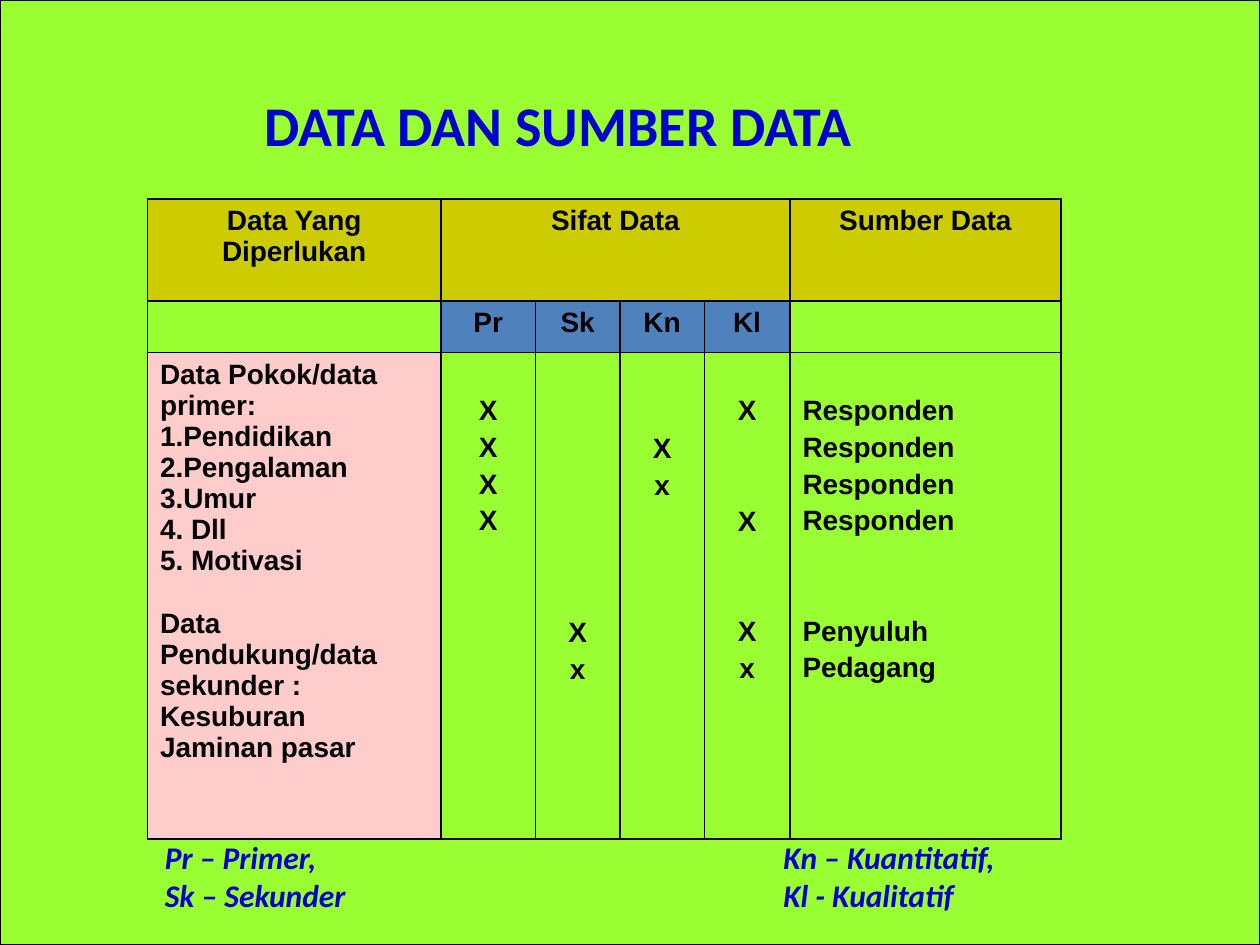
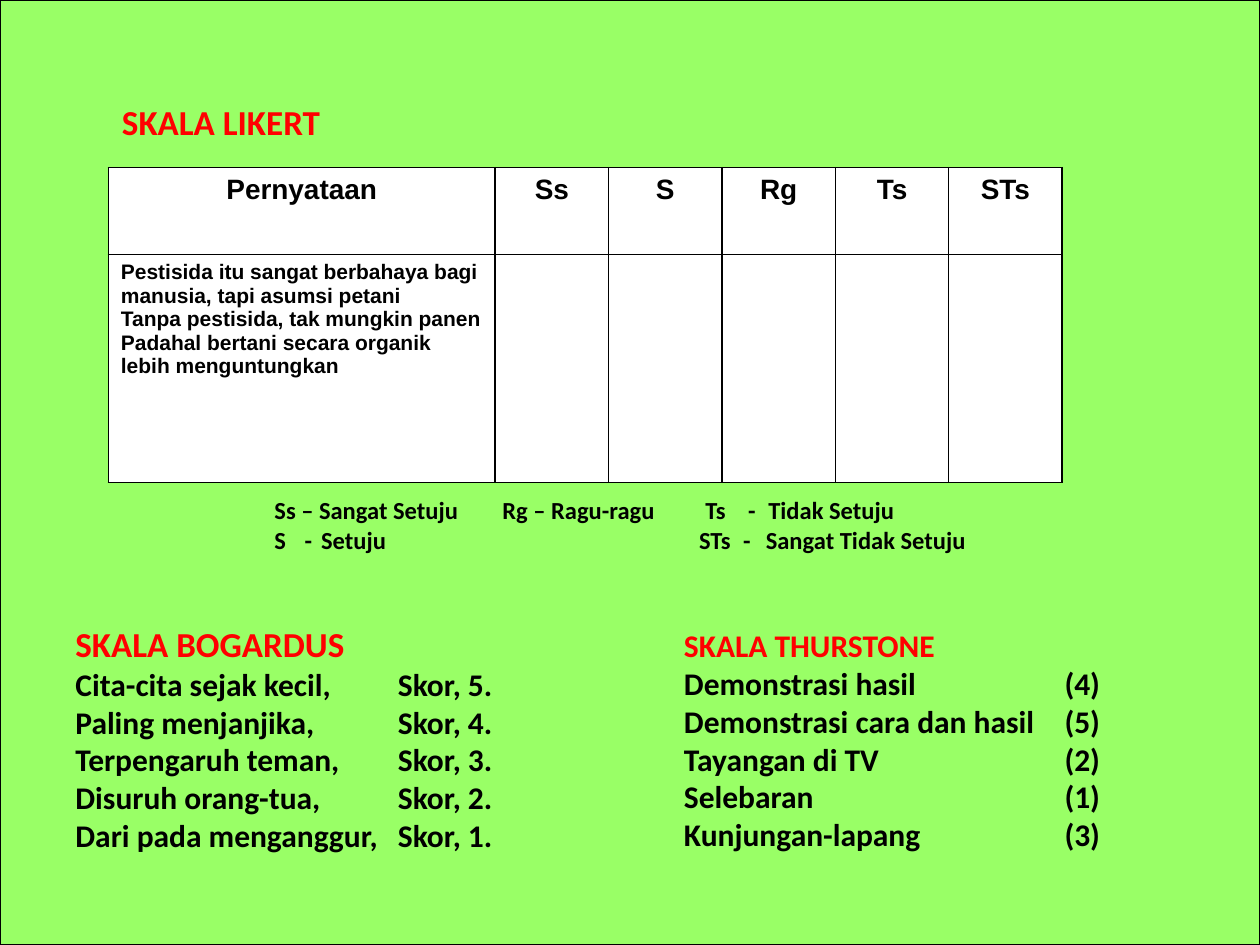
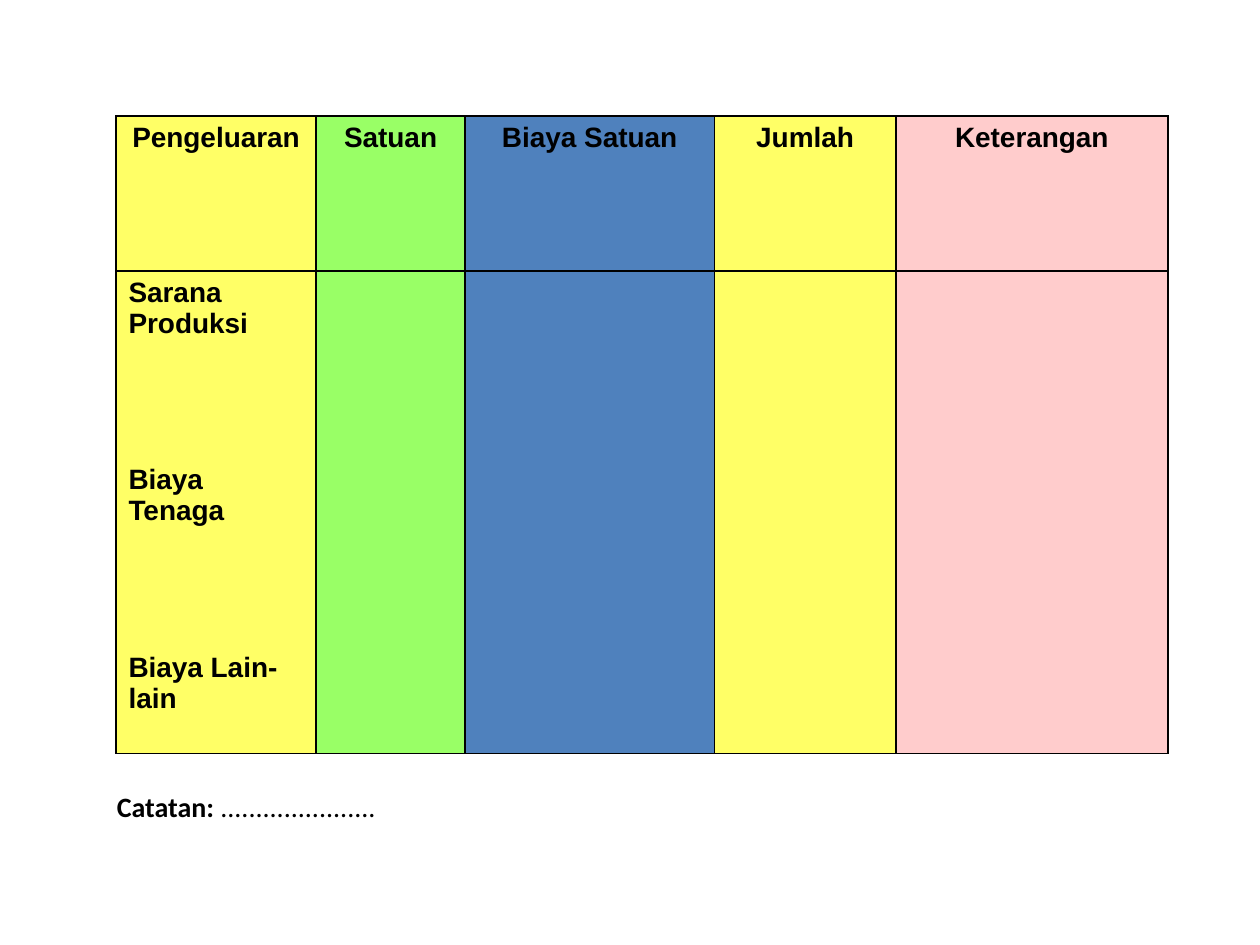
import pptx
import pptx.util
import pptx.dml.color
import pptx.enum.shapes
import pptx.enum.text
import pptx.oxml
import pptx.oxml.ns

Inches = pptx.util.Inches
Pt = pptx.util.Pt
RGBColor = pptx.dml.color.RGBColor
ALIGN = pptx.enum.text.PP_ALIGN
ANCHOR = pptx.enum.text.MSO_ANCHOR

# Shared colours and fonts
BLACK = RGBColor(0x00, 0x00, 0x00)
WHITE = RGBColor(0xFF, 0xFF, 0xFF)
NAVY = RGBColor(0x00, 0x00, 0xCC)
RED = RGBColor(0xFF, 0x00, 0x00)
LIME = RGBColor(0x99, 0xFF, 0x33)
GREEN = RGBColor(0x99, 0xFF, 0x66)
OLIVE = RGBColor(0xCC, 0xCC, 0x00)
BLUE = RGBColor(0x4F, 0x81, 0xBD)
PINK = RGBColor(0xFF, 0xCC, 0xCC)
YELLOW = RGBColor(0xFF, 0xFF, 0x66)
TEXT_FONT = "Calibri"
TABLE_FONT = "Arial"

# Line pitch in table cells, as a share of the font size
LINE_HEIGHT = 1.117
CELL_MARGIN = 0.05


def add_run(paragraph, text, font_name, size, color=BLACK, bold=True, italic=False):
    run = paragraph.add_run()
    run.text = text
    run.font.name = font_name
    run.font.size = Pt(size)
    run.font.color.rgb = color
    run.font.bold = bold
    run.font.italic = italic


def set_tabs(paragraph, positions):
    namespace = pptx.oxml.ns.nsdecls("a")
    stops = "".join(f'<a:tab pos="{Inches(position)}" algn="l"/>' for position in positions)
    properties = paragraph._p.get_or_add_pPr()
    properties.append(pptx.oxml.parse_xml(f"<a:tabLst {namespace}>{stops}</a:tabLst>"))


def add_backdrop(slide, color):
    backdrop = slide.shapes.add_shape(
        pptx.enum.shapes.MSO_SHAPE.RECTANGLE, 0, 0, Inches(10), Inches(7.5))
    backdrop.shadow.inherit = False
    backdrop.fill.solid()
    backdrop.fill.fore_color.rgb = color
    backdrop.line.color.rgb = BLACK
    backdrop.line.width = Pt(0.75)


def add_text(slide, box, lines, anchor=ANCHOR.MIDDLE):
    """Each line is (tab positions, run, run, ...); a run is (text, style)."""
    shape = slide.shapes.add_textbox(*map(Inches, box))
    frame = shape.text_frame
    frame.word_wrap = True
    frame.vertical_anchor = anchor
    for index, (tabs, *runs) in enumerate(lines):
        paragraph = frame.paragraphs[0] if index == 0 else frame.add_paragraph()
        if tabs:
            set_tabs(paragraph, tabs)
        for text, style in runs:
            add_run(paragraph, text, TEXT_FONT, **style)


def add_title(slide, box, text, size, color):
    add_text(slide, box, [((), (text, {"size": size, "color": color}))], ANCHOR.TOP)


def add_scale(slide, box, heading, heading_size, rows, tab):
    """A red heading above tabbed rows of item and score."""
    lines = [((), (heading, {"size": heading_size, "color": RED}))]
    lines += [((tab,), (f"{item}\t{score}", {"size": 18})) for item, score in rows]
    add_text(slide, box, lines)


def set_borders(cell):
    properties = cell._tc.get_or_add_tcPr()
    namespace = pptx.oxml.ns.nsdecls("a")
    for index, side in enumerate(("lnL", "lnR", "lnT", "lnB")):
        properties.insert(index, pptx.oxml.parse_xml(
            f'<a:{side} {namespace} w="{Pt(1)}"><a:solidFill>'
            f'<a:srgbClr val="{BLACK}"/></a:solidFill></a:{side}>'))


def add_table(slide, left, top, widths, heights):
    frame = slide.shapes.add_table(
        len(heights), len(widths), Inches(left), Inches(top),
        Inches(sum(widths)), Inches(sum(heights)))
    table = frame.table
    table.first_row = False
    table.horz_banding = False
    for column, width in zip(table.columns, widths):
        column.width = Inches(width)
    for row, height in zip(table.rows, heights):
        row.height = Inches(height)
    for cell in table.iter_cells():
        cell.fill.background()
        set_borders(cell)
    return table


def fill_cell(cell, color):
    cell.fill.solid()
    cell.fill.fore_color.rgb = color


def write_cell(cell, lines, size=16, align=ALIGN.LEFT, gap=0):
    """Write one paragraph a line; None leaves the height of a line free."""
    pitch = size * LINE_HEIGHT + gap
    skipped = 0
    paragraph = None
    for line in lines:
        if line is None:
            skipped += 1
            continue
        if paragraph is None:
            paragraph = cell.text_frame.paragraphs[0]
            cell.margin_top = Inches(round(CELL_MARGIN + skipped * pitch / 72, 2))
        else:
            paragraph = cell.text_frame.add_paragraph()
            paragraph.space_before = Pt(round(gap + skipped * pitch, 1))
        paragraph.alignment = align
        add_run(paragraph, line, TABLE_FONT, size)
        skipped = 0


def write_header(cell, color, *lines):
    fill_cell(cell, color)
    write_cell(cell, lines, align=ALIGN.CENTER)


def build_data_sources(slide):
    add_backdrop(slide, LIME)
    table = add_table(slide, 1.17, 1.58,
                      [2.33, 0.75, 0.67, 0.67, 0.68, 2.15], [0.81, 0.41, 3.86])

    # Header rows
    table.cell(0, 1).merge(table.cell(0, 4))
    write_header(table.cell(0, 0), OLIVE, "Data Yang", "Diperlukan")
    write_header(table.cell(0, 1), OLIVE, "Sifat Data")
    write_header(table.cell(0, 5), OLIVE, "Sumber Data")
    for column, code in enumerate(("Pr", "Sk", "Kn", "Kl"), start=1):
        write_header(table.cell(1, column), BLUE, code)

    # Needed data, marks and sources
    needed = table.cell(2, 0)
    fill_cell(needed, PINK)
    write_cell(needed, [
        "Data Pokok/data primer:", "1.Pendidikan", "2.Pengalaman", "3.Umur",
        "4. Dll", "5. Motivasi", None, "Data Pendukung/data sekunder :",
        "Kesuburan", "Jaminan pasar"])
    marks = [
        [None, "X", "X", "X", "X"],
        [None] * 7 + ["X", "x"],
        [None, None, "X", "x"],
        [None, "X", None, None, "X", None, None, "X", "x"],
    ]
    for column, lines in enumerate(marks, start=1):
        write_cell(table.cell(2, column), lines, align=ALIGN.CENTER, gap=3.2)
    sources = [None] + ["Responden"] * 4 + [None, None, "Penyuluh", "Pedagang"]
    write_cell(table.cell(2, 5), sources, gap=3.2)

    # Legend and title
    style = {"size": 18, "color": NAVY, "italic": True}
    add_text(slide, (1.21, 6.6, 7.38, 0.71), [
        ((4.91,), ("Pr – Primer,\tKn – Kuantitatif,", style)),
        ((4.91,), ("Sk – Sekunder\tKl - Kualitatif", style))], ANCHOR.TOP)
    add_title(slide, (2, 0.67, 5.93, 0.63), "DATA DAN SUMBER DATA", 32, NAVY)


def build_scales(slide):
    add_backdrop(slide, GREEN)

    # Likert table
    table = add_table(slide, 0.86, 1.33, [3.07] + [0.9] * 5, [0.69, 1.81])
    headings = ("Pernyataan", "Ss", "S", "Rg", "Ts", "STs")
    for column, heading in enumerate(headings):
        write_header(table.cell(0, column), WHITE, heading)
        fill_cell(table.cell(1, column), WHITE)
    write_cell(table.cell(1, 0), [
        "Pestisida itu sangat berbahaya bagi manusia, tapi asumsi petani",
        "Tanpa pestisida, tak mungkin panen",
        "Padahal bertani secara organik lebih menguntungkan"], size=12)

    # Legend
    style = {"size": 14}
    add_text(slide, (2.08, 3.88, 5.9, 0.57), [
        ((1.81, 3.42, 3.76, 3.92),
         ("Ss – Sangat Setuju\tRg – Ragu-ragu\tTs\t-\tTidak Setuju", style)),
        ((0.24, 0.37, 3.37, 3.72, 3.9),
         ("S\t-\tSetuju\tSTs\t-\tSangat Tidak Setuju", style))])

    # Other scales
    reasons = ("Cita-cita sejak kecil,", "Paling menjanjika,", "Terpengaruh teman,",
               "Disuruh orang-tua,", "Dari pada menganggur,")
    add_scale(slide, (0.5, 4.89, 4.42, 1.94), "SKALA BOGARDUS", 20,
              [(reason, f"Skor, {5 - index}.") for index, reason in enumerate(reasons)],
              2.56)
    add_scale(slide, (5.33, 4.92, 4.25, 1.9), "SKALA THURSTONE", 18, [
        ("Demonstrasi hasil", "(4)"), ("Demonstrasi cara dan hasil", "(5)"),
        ("Tayangan di TV", "(2)"), ("Selebaran", "(1)"), ("Kunjungan-lapang", "(3)")],
        3.02)
    add_title(slide, (0.87, 0.75, 1.9, 0.44), "SKALA LIKERT", 20, RED)


def build_expenses(slide):
    table = add_table(slide, 0.92, 0.92, [1.59, 1.18, 1.98, 1.44, 2.16], [1.23, 3.83])
    columns = [("Pengeluaran", YELLOW), ("Satuan", GREEN), ("Biaya Satuan", BLUE),
               ("Jumlah", YELLOW), ("Keterangan", PINK)]
    for column, (heading, color) in enumerate(columns):
        write_header(table.cell(0, column), color, heading)
        fill_cell(table.cell(1, column), color)
    space = [None] * 4
    write_cell(table.cell(1, 0), [
        "Sarana Produksi", *space, "Biaya Tenaga", *space, "Biaya Lain-lain"])

    # Note line
    add_text(slide, (0.83, 6.08, 2.4, 0.64), [
        ((), ("Catatan:", {"size": 16}),
         (" ......................", {"size": 16, "bold": False}))])


def main():
    presentation = pptx.Presentation()
    presentation.slide_width = Inches(10)
    presentation.slide_height = Inches(7.5)
    blank_layout = presentation.slide_layouts[6]
    for build in (build_data_sources, build_scales, build_expenses):
        build(presentation.slides.add_slide(blank_layout))
    presentation.save("out.pptx")


if __name__ == "__main__":
    main()
